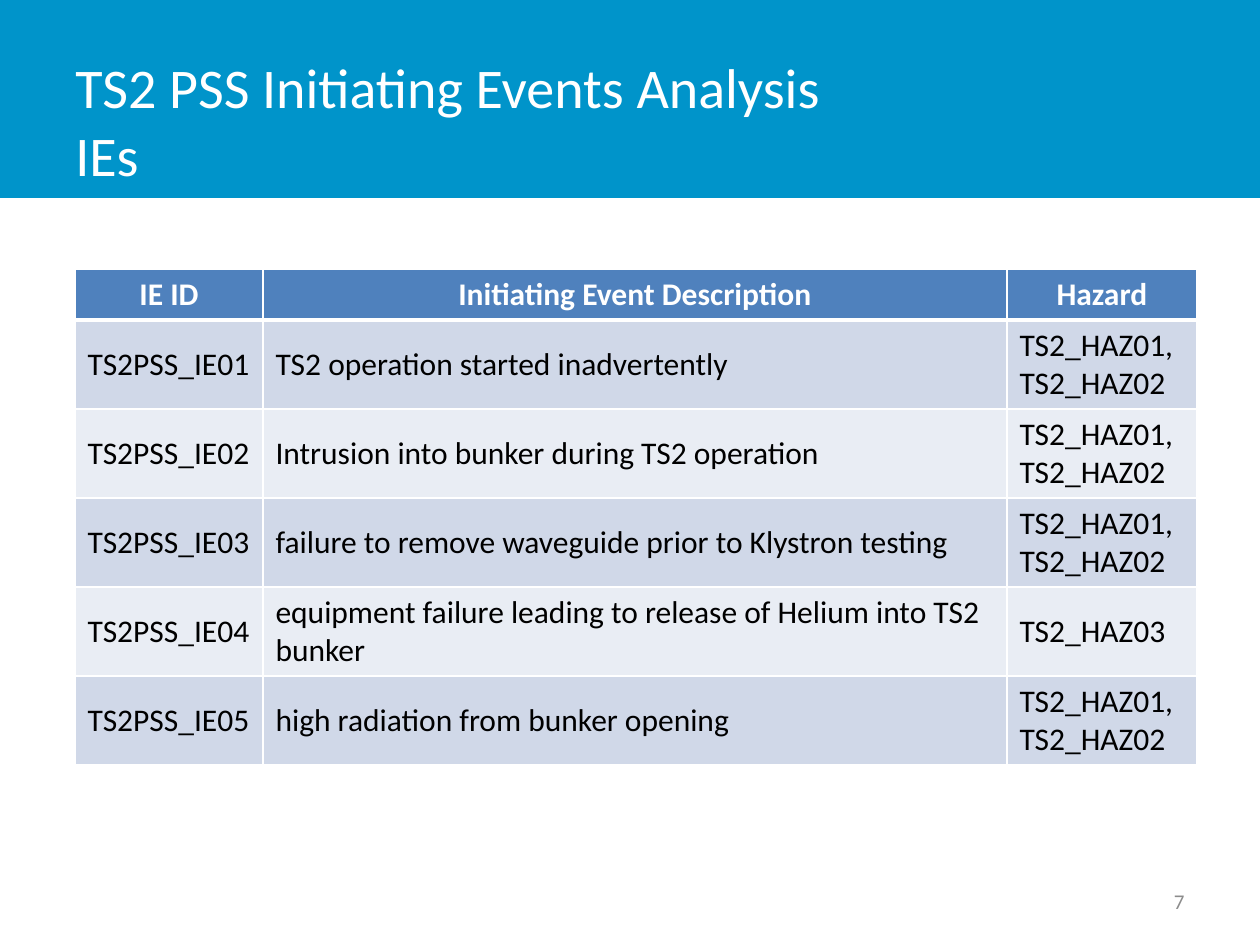
"""Build the TS2 PSS initiating events slide."""
import pptx
import pptx.chart.data
import pptx.dml.color
import pptx.enum.shapes
import pptx.enum.text
import pptx.oxml
import pptx.oxml.ns
import pptx.util

PX = 914400 // 126
HUES = {"band": "0094CA", "head": "4F81BD", "odd": "D0D8E8", "even": "E9EDF4",
        "white": "FFFFFF", "black": "000000", "grey": "8C8C8C"}
ALIGN = pptx.enum.text.PP_ALIGN
MID = pptx.enum.text.MSO_ANCHOR.MIDDLE


def style(frame, size, hue, align=ALIGN.LEFT, bold=False):
    frame.word_wrap = True
    for para in frame.paragraphs:
        para.alignment = align
        for run in para.runs:
            font = run.font
            font.name, font.size, font.bold = "Calibri", pptx.util.Pt(size), bold
            font.color.rgb = pptx.dml.color.RGBColor.from_string(HUES[hue])


def edge(cell, side, width):
    line = pptx.oxml.parse_xml(
        f'<a:ln{side} {pptx.oxml.ns.nsdecls("a")} w="{pptx.util.Pt(width)}"><a:solidFill>'
        f'<a:srgbClr val="{HUES["white"]}"/></a:solidFill></a:ln{side}>')
    cell._tc.get_or_add_tcPr().append(line)


deck = pptx.Presentation()
deck.slide_width, deck.slide_height = 1260 * PX, 945 * PX
slide = deck.slides.add_slide(deck.slide_layouts[6])
shapes = slide.shapes

band = shapes.add_shape(pptx.enum.shapes.MSO_SHAPE.RECTANGLE, 0, 0, 1260 * PX, 198 * PX)
band.shadow.inherit = False
band.fill.solid()
band.fill.fore_color.rgb = pptx.dml.color.RGBColor.from_string(HUES["band"])
band.line.fill.background()

labels = [
    ("TS2 PSS Initiating Events Analysis\vIEs", (63, 41, 984, 158), 32, "white", ALIGN.LEFT),
    ("7", (903, 876, 294, 50), 12, "grey", ALIGN.RIGHT),
]
for text, box, size, hue, align in labels:
    frame = shapes.add_textbox(*(n * PX for n in box)).text_frame
    frame.text = text
    frame.vertical_anchor = MID
    style(frame, size, hue, align)

both = "TS2_HAZ01, TS2_HAZ02"
events = [
    ("TS2 operation started inadvertently", both),
    ("Intrusion into bunker during TS2 operation", both),
    ("failure to remove waveguide prior to Klystron testing", both),
    ("equipment failure leading to release of Helium into TS2 bunker", "TS2_HAZ03"),
    ("high radiation from bunker opening", both),
]
rows = [("IE ID", "Initiating Event Description", "Hazard")]
rows += [(f"TS2PSS_IE{n:02}", *event) for n, event in enumerate(events, 1)]
widths = [188, 744, 190]

table = shapes.add_table(len(rows), len(widths), 75 * PX, 269 * PX,
                         sum(widths) * PX, 496 * PX).table
table.horz_banding = False
for col, width in zip(table.columns, widths):
    col.width = width * PX
for r, row in enumerate(rows):
    table.rows[r].height = (89 if r else 51) * PX
    for c, text in enumerate(row):
        cell = table.cell(r, c)
        cell.text = text
        for side in "LRTB":
            thick = (r, side) in [(0, "B"), (1, "T")]
            edge(cell, side, 3 if thick else 1)
        cell.fill.solid()
        hue = "head" if r == 0 else "odd" if r % 2 else "even"
        cell.fill.fore_color.rgb = pptx.dml.color.RGBColor.from_string(HUES[hue])
        if r:
            cell.vertical_anchor = MID
            style(cell.text_frame, 18, "black")
        else:
            style(cell.text_frame, 18, "white", ALIGN.CENTER, True)

deck.save("out.pptx")
